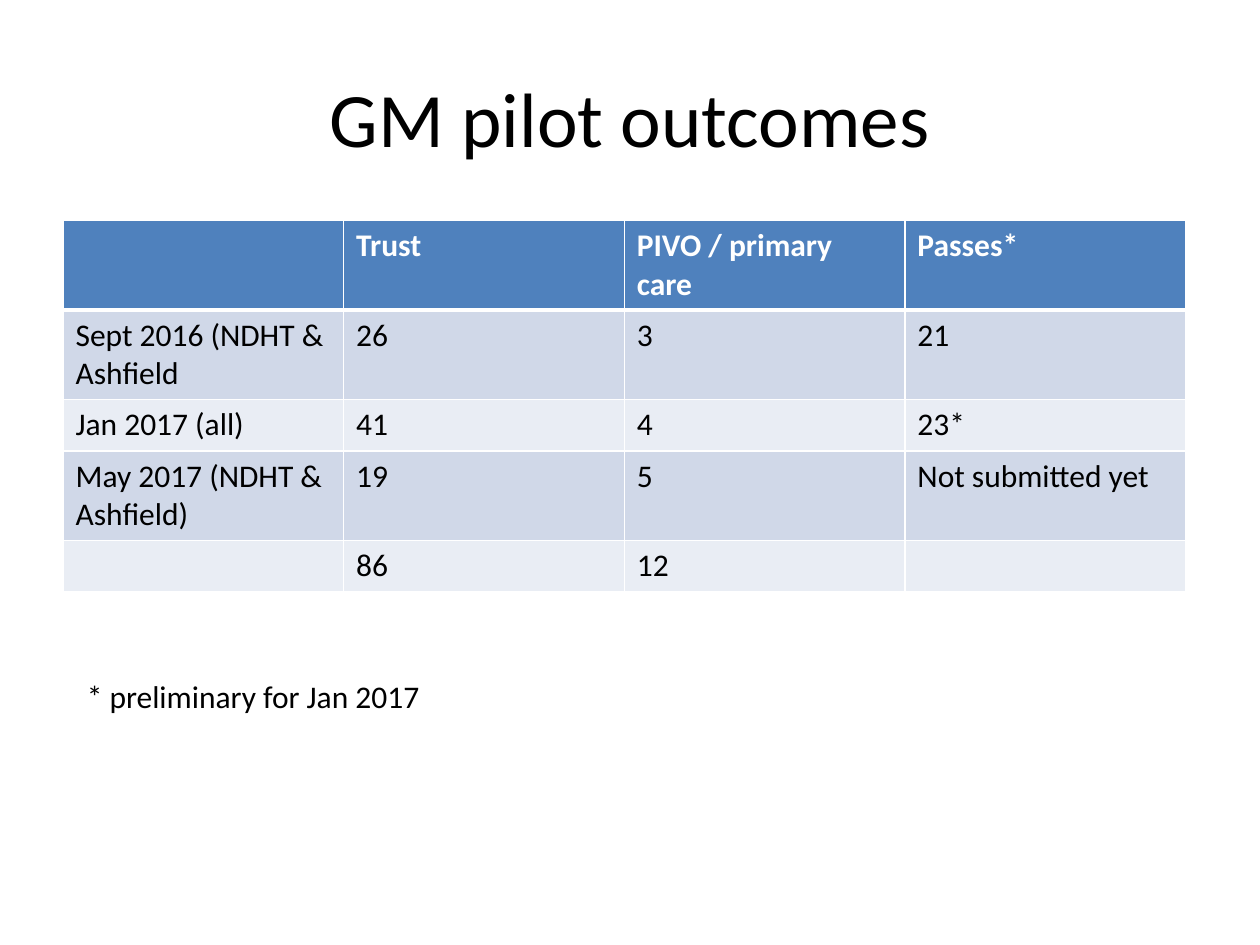
from lxml import etree
from pptx import Presentation
from pptx.dml.color import RGBColor
from pptx.enum.text import MSO_ANCHOR, MSO_AUTO_SIZE, PP_ALIGN
from pptx.oxml.ns import qn
from pptx.util import Inches, Pt

LEFT, CENTER = PP_ALIGN.LEFT, PP_ALIGN.CENTER
TOP, MIDDLE = MSO_ANCHOR.TOP, MSO_ANCHOR.MIDDLE
FIT_SHAPE = MSO_AUTO_SIZE.SHAPE_TO_FIT_TEXT
BLANK_LAYOUT = 6

BLACK, WHITE = "000000", "FFFFFF"
HEADER_FILL = "4F81BD"
BAND_FILLS = ("D0D8E8", "E9EDF4")

OUTCOMES = [
    ("", "Trust", "PIVO / primary care", "Passes*"),
    ("Sept 2016 (NDHT & Ashfield", "26", "3", "21"),
    ("Jan 2017 (all)", "41", "4", "23*"),
    ("May 2017 (NDHT & Ashfield)", "19", "5", "Not submitted yet"),
    ("", "86", "12", ""),
]
ONE_LINE, TWO_LINES = 0.41, 0.71
ROW_HEIGHTS = [TWO_LINES, TWO_LINES, ONE_LINE, TWO_LINES, ONE_LINE]


def color(hex_string):
    return RGBColor.from_string(hex_string)


class SlideBuilder:
    font_name = "Calibri"
    body_size = 18

    def __init__(self, slide):
        self.slide = slide

    def add_run(self, paragraph, text, size, font_color=BLACK, bold=False):
        run = paragraph.add_run()
        run.text = text
        run.font.name = self.font_name
        run.font.size = Pt(size)
        run.font.bold = bold
        run.font.color.rgb = color(font_color)

    def add_text(self, text, left, top, width, height, size=body_size,
                 align=LEFT, anchor=TOP, wrap=True):
        shape = self.slide.shapes.add_textbox(
            Inches(left), Inches(top), Inches(width), Inches(height))
        frame = shape.text_frame
        frame.word_wrap = wrap
        frame.vertical_anchor = anchor
        if not wrap:
            frame.auto_size = FIT_SHAPE
        paragraph = frame.paragraphs[0]
        paragraph.alignment = align
        self.add_run(paragraph, text, size)

    def add_borders(self, cell, widths):
        properties = cell._tc.get_or_add_tcPr()
        for side, width in widths.items():
            line = etree.SubElement(properties, qn(f"a:ln{side}"), w=str(Pt(width)))
            fill = etree.SubElement(line, qn("a:solidFill"))
            etree.SubElement(fill, qn("a:srgbClr"), val=WHITE)

    def add_table(self, rows, row_heights, left, top, width):
        shape = self.slide.shapes.add_table(
            len(rows), len(rows[0]), Inches(left), Inches(top),
            Inches(width), Inches(sum(row_heights)))
        table = shape.table
        for column in table.columns:
            column.width = Inches(width / len(rows[0]))
        for row_index, (values, height) in enumerate(zip(rows, row_heights)):
            table.rows[row_index].height = Inches(height)
            header = row_index == 0
            fill = HEADER_FILL if header else BAND_FILLS[(row_index - 1) % 2]
            # The rule under the header is thicker than the grid
            borders = {"L": 1, "R": 1, "T": 3 if row_index == 1 else 1,
                       "B": 3 if header else 1}
            for column_index, text in enumerate(values):
                cell = table.cell(row_index, column_index)
                self.add_borders(cell, borders)
                cell.fill.solid()
                cell.fill.fore_color.rgb = color(fill)
                if text:
                    self.add_run(cell.text_frame.paragraphs[0], text, self.body_size,
                                 WHITE if header else BLACK, header)


def main():
    presentation = Presentation()
    presentation.slide_width = Inches(10)
    presentation.slide_height = Inches(7.5)
    slide = presentation.slides.add_slide(presentation.slide_layouts[BLANK_LAYOUT])
    builder = SlideBuilder(slide)

    # Title
    builder.add_text("GM pilot outcomes", 0.5, 0.3, 9, 1.25, size=44,
                     align=CENTER, anchor=MIDDLE)

    # Outcomes table
    builder.add_table(OUTCOMES, ROW_HEIGHTS, 0.5, 1.75, 8.91)

    # Footnote
    builder.add_text("* preliminary for Jan 2017", 0.59, 5.32, 2.88, 0.71, wrap=False)

    presentation.save("out.pptx")


if __name__ == "__main__":
    main()
